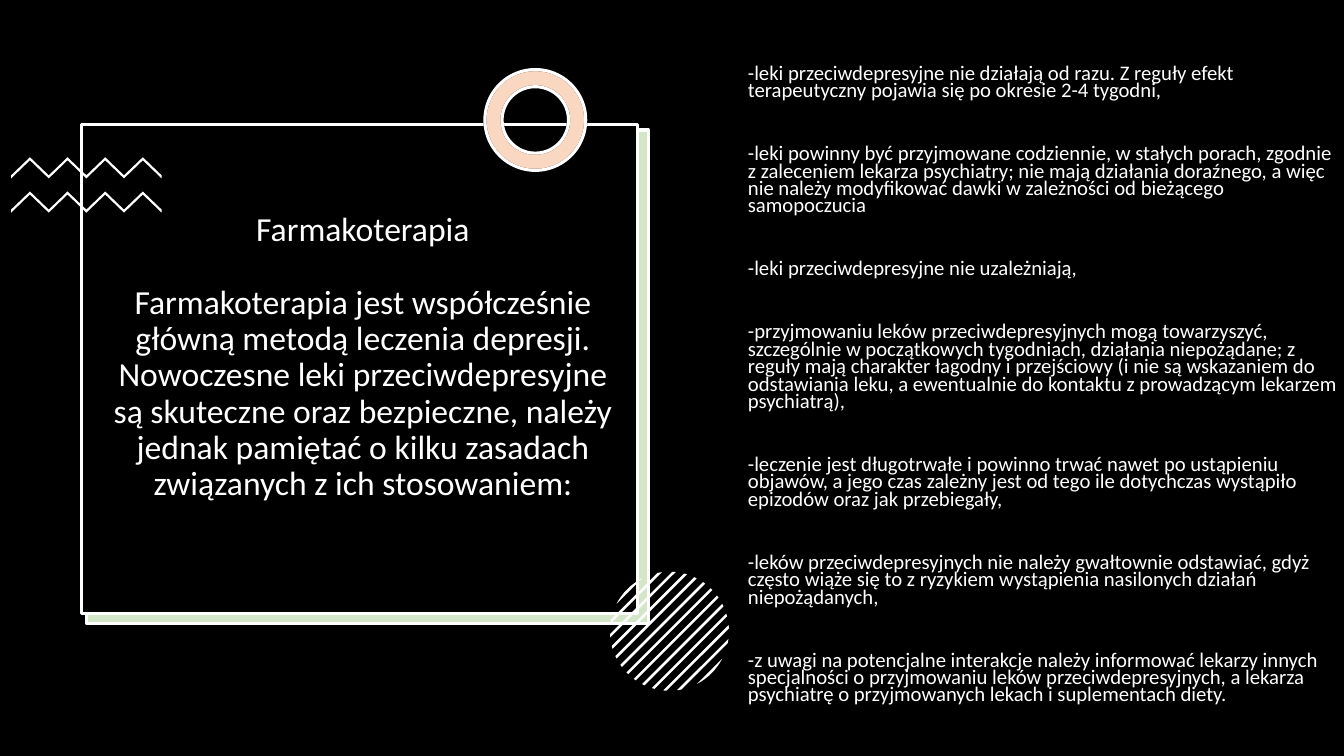
import math
import pptx
import pptx.util
import pptx.dml.color
import pptx.enum.shapes
import pptx.enum.text
from lxml import etree
from pptx.oxml.ns import qn

TITLE = [
    "Farmakoterapia",
    "Farmakoterapia jest współcześnie główną metodą leczenia depresji. Nowoczesne leki przeciwdepresyjne są skuteczne oraz bezpieczne, należy jednak pamiętać o kilku zasadach związanych z ich stosowaniem:",
]
RULES = [
    "-leki przeciwdepresyjne nie działają od razu. Z reguły efekt terapeutyczny pojawia się po okresie 2-4 tygodni,",
    "-leki powinny być przyjmowane codziennie, w stałych porach, zgodnie z zaleceniem lekarza psychiatry; nie mają działania doraźnego, a więc nie należy modyfikować dawki w zależności od bieżącego samopoczucia",
    "-leki przeciwdepresyjne nie uzależniają,",
    "-przyjmowaniu leków przeciwdepresyjnych mogą towarzyszyć, szczególnie w początkowych tygodniach, działania niepożądane; z reguły mają charakter łagodny i przejściowy (i nie są wskazaniem do odstawiania leku, a ewentualnie do kontaktu z prowadzącym lekarzem psychiatrą),",
    "-leczenie jest długotrwałe i powinno trwać nawet po ustąpieniu objawów, a jego czas zależny jest od tego ile dotychczas wystąpiło epizodów oraz jak przebiegały,",
    "-leków przeciwdepresyjnych nie należy gwałtownie odstawiać, gdyż często wiąże się to z ryzykiem wystąpienia nasilonych działań niepożądanych,",
    "-z uwagi na potencjalne interakcje należy informować lekarzy innych specjalności o przyjmowaniu leków przeciwdepresyjnych, a lekarza psychiatrę o przyjmowanych lekach i suplementach diety.",
]
COLORS = {"black": "000000", "white": "FFFFFF", "green": "70AD47", "orange": "ED7D31"}
FONT = "Calibri"
TINT = 30

RECTANGLE = pptx.enum.shapes.MSO_SHAPE.RECTANGLE
DONUT = pptx.enum.shapes.MSO_SHAPE.DONUT
RING = (36.08, 9.2, 7.5, 13.33)
PANELS = [
    (RECTANGLE, (0, 0, 100, 100), "black", None, None),
    (RECTANGLE, (6.38, 17.33, 41.79, 65.33), "white", None, None),
    (RECTANGLE, (6.45, 17.2, 41.79, 65.33), "green", TINT, "white"),
    (RECTANGLE, (6.08, 16.53, 41.34, 64.67), "black", None, "white"),
]
RINGS = [
    (DONUT, RING, "white", None, "black"),
    (DONUT, RING, "orange", TINT, "white"),
]
TITLE_BOX = (6.9, 20.27, 40.21, 58.93)
RULES_BOX = (54.91, 8.13, 45.84, 90.53)
ZIGZAG = {"left": 0.83, "tops": (20.8, 25.33), "step": 1.4, "rise": 2.4, "thickness": 0.4, "peaks": 4}
STRIPED_CIRCLE = {"center": (49.81, 83.5), "radius": 7.87, "stripes": 13, "pitch": 1.28, "half_width": 0.17}

presentation = pptx.Presentation()
presentation.slide_width = pptx.util.Inches(13.33)
presentation.slide_height = pptx.util.Inches(7.5)
slide = presentation.slides.add_slide(presentation.slide_layouts[6])


def across(share):
    return round(presentation.slide_width * share / 100)


def down(share):
    return round(presentation.slide_height * share / 100)


def place(box):
    left, top, width, height = box
    return across(left), down(top), across(width), down(height)


def color(name):
    return pptx.dml.color.RGBColor.from_string(COLORS[name])


def paint(shape, fill, opacity=None, line=None):
    shape.shadow.inherit = False
    shape.fill.solid()
    shape.fill.fore_color.rgb = color(fill)
    if opacity:
        tone = shape.fill._xPr.find(qn("a:solidFill"))[0]
        etree.SubElement(tone, qn("a:alpha")).set("val", str(opacity * 1000))
    if line:
        shape.line.color.rgb = color(line)
        shape.line.width = pptx.util.Pt(2.25)
    else:
        shape.line.fill.background()


def draw_presets(presets):
    for kind, box, fill, opacity, line in presets:
        shape = slide.shapes.add_shape(kind, *place(box))
        if kind == DONUT:
            shape.adjustments[0] = 0.17
        paint(shape, fill, opacity, line)


def draw_outline(points):
    builder = slide.shapes.build_freeform(*points[0])
    builder.add_line_segments(points[1:], close=True)
    paint(builder.convert_to_shape(), "white")


def draw_zigzag(top):
    upper = [
        (across(ZIGZAG["left"] + i * ZIGZAG["step"]), down(top + (0 if i % 2 else ZIGZAG["rise"])))
        for i in range(2 * ZIGZAG["peaks"] + 1)
    ]
    lower = [(x, y + down(ZIGZAG["thickness"])) for x, y in reversed(upper)]
    draw_outline(upper + lower)


def draw_stripe(offset):
    center_x, center_y = across(STRIPED_CIRCLE["center"][0]), down(STRIPED_CIRCLE["center"][1])
    radius = STRIPED_CIRCLE["radius"]
    ends = {1: [], -1: []}
    for part in (-1, -0.5, 0, 0.5, 1):
        distance = offset + part * STRIPED_CIRCLE["half_width"]
        half_chord = math.sqrt(max(radius ** 2 - distance ** 2, 0))
        for side, points in ends.items():
            points.append((
                center_x + down((distance + side * half_chord) / math.sqrt(2)),
                center_y + down((distance - side * half_chord) / math.sqrt(2)),
            ))
    draw_outline(ends[1] + ends[-1][::-1])


def write(box, texts, size, spacing, gap, alignment, anchor, bottom=0.05):
    frame = slide.shapes.add_textbox(*place(box)).text_frame
    frame.word_wrap = True
    frame.vertical_anchor = anchor
    frame.margin_bottom = pptx.util.Inches(bottom)
    for index, text in enumerate(texts):
        paragraph = frame.add_paragraph() if index else frame.paragraphs[0]
        paragraph.alignment = alignment
        paragraph.line_spacing = spacing
        paragraph.space_before = pptx.util.Pt(gap if index else 0)
        run = paragraph.add_run()
        run.text = text
        run.font.name = FONT
        run.font.size = pptx.util.Pt(size)
        run.font.color.rgb = color("white")


draw_presets(PANELS)
for zigzag_top in ZIGZAG["tops"]:
    draw_zigzag(zigzag_top)
draw_presets(RINGS)
for number in range(STRIPED_CIRCLE["stripes"]):
    draw_stripe((number - STRIPED_CIRCLE["stripes"] // 2) * STRIPED_CIRCLE["pitch"])

ALIGN = pptx.enum.text.PP_ALIGN
ANCHOR = pptx.enum.text.MSO_ANCHOR
write(TITLE_BOX, TITLE, 24, 0.9, 26, ALIGN.CENTER, ANCHOR.MIDDLE, 0.41)
write(RULES_BOX, RULES, 14.8, 0.7, 32.6, ALIGN.LEFT, ANCHOR.TOP)

presentation.save("out.pptx")
